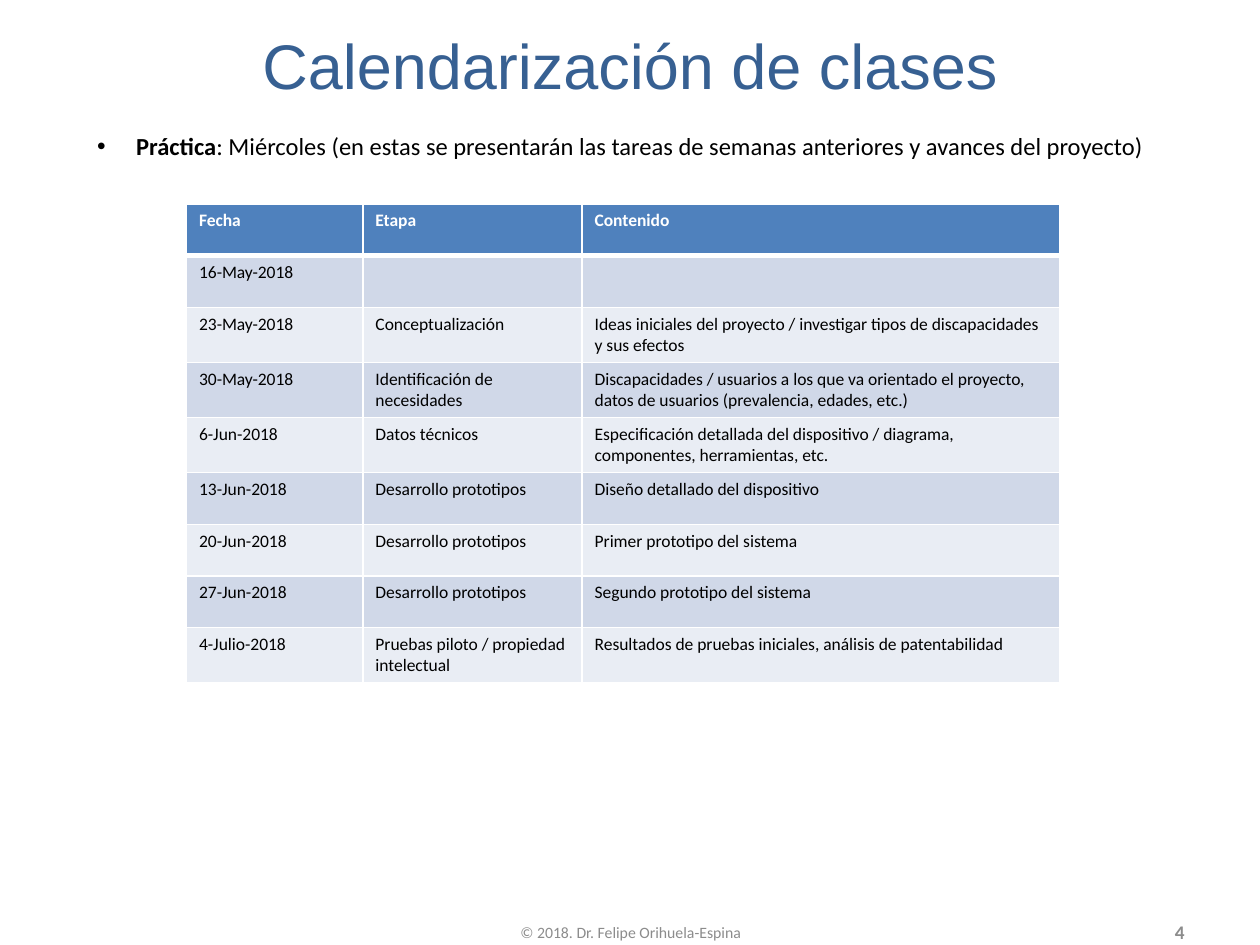
from lxml import etree
from pptx import Presentation
from pptx.dml.color import RGBColor
from pptx.enum.text import MSO_ANCHOR, MSO_AUTO_SIZE, PP_ALIGN
from pptx.oxml.ns import qn
from pptx.util import Inches, Pt

CENTER, RIGHT = PP_ALIGN.CENTER, PP_ALIGN.RIGHT
MIDDLE, TOP = MSO_ANCHOR.MIDDLE, MSO_ANCHOR.TOP
FIXED = MSO_AUTO_SIZE.NONE

COLORS = {
    "title": "376092",
    "head": "4F81BD",
    "odd": "D0D8E8",
    "even": "E9EDF4",
    "white": "FFFFFF",
    "black": "000000",
    "gray": "8C8C8C",
}
WIDTHS = [1.4, 1.74, 3.79]
ROW_H = 0.41
ROWS = [
    ("Fecha", "Etapa", "Contenido"),
    ("16-May-2018", "", ""),
    ("23-May-2018", "Conceptualización",
     "Ideas iniciales del proyecto / investigar tipos de discapacidades y sus efectos"),
    ("30-May-2018", "Identificación de necesidades",
     "Discapacidades / usuarios a los que va orientado el proyecto, "
     "datos de usuarios (prevalencia, edades, etc.)"),
    ("6-Jun-2018", "Datos técnicos",
     "Especificación detallada del dispositivo / diagrama, componentes, herramientas, etc."),
    ("13-Jun-2018", "Desarrollo prototipos", "Diseño detallado del dispositivo"),
    ("20-Jun-2018", "Desarrollo prototipos", "Primer prototipo del sistema"),
    ("27-Jun-2018", "Desarrollo prototipos", "Segundo prototipo del sistema"),
    ("4-Julio-2018", "Pruebas piloto / propiedad intelectual",
     "Resultados de pruebas iniciales, análisis de patentabilidad"),
]


def style(run, size, color, bold=False, face="Calibri"):
    font = run.font
    font.name, font.size, font.bold = face, Pt(size), bold
    font.color.rgb = RGBColor.from_string(COLORS[color])


def place(shape, left, top, width, height, anchor):
    shape.left, shape.top = Inches(left), Inches(top)
    shape.width, shape.height = Inches(width), Inches(height)
    frame = shape.text_frame
    frame.word_wrap = True
    frame.auto_size = FIXED
    frame.vertical_anchor = anchor
    return frame


def add_title(slide, text):
    frame = place(slide.shapes.title, 0.51, 0.05, 8.98, 0.92, MIDDLE)
    frame.text = text
    para = frame.paragraphs[0]
    para.alignment = CENTER
    style(para.runs[0], 36, "title", face="Arial")


def add_bullet(slide, lead, rest):
    frame = place(slide.placeholders[1], 0.67, 0.99, 8.98, 0.34, TOP)
    frame.text = lead
    para = frame.paragraphs[0]
    para.space_before = Pt(0)
    props = para._p.get_or_add_pPr()
    props.set("marL", str(Inches(0.31)))
    props.set("indent", str(Inches(-0.31)))
    etree.SubElement(props, qn("a:buFont"), typeface="Arial")
    etree.SubElement(props, qn("a:buChar"), char="•")
    para.add_run().text = rest
    for run, bold in zip(para.runs, (True, False)):
        style(run, 14, "black", bold)


def add_edge(cell, side, width):
    props = cell._tc.get_or_add_tcPr()
    line = etree.SubElement(props, qn("a:ln" + side), w=str(Pt(width)))
    fill = etree.SubElement(line, qn("a:solidFill"))
    etree.SubElement(fill, qn("a:srgbClr"), val=COLORS["white"])


def fill_cell(cell, text, row):
    head = row == 0
    for side in "LRTB":
        thick = (head and side == "B") or (row == 1 and side == "T")
        add_edge(cell, side, 3 if thick else 1)
    band = "head" if head else ("even", "odd")[row % 2]
    cell.fill.solid()
    cell.fill.fore_color.rgb = RGBColor.from_string(COLORS[band])
    cell.text = text
    for run in cell.text_frame.paragraphs[0].runs:
        style(run, 10, "white" if head else "black", head)


def add_grid(slide):
    frame = slide.shapes.add_table(
        len(ROWS), len(WIDTHS), Inches(1.48), Inches(1.62),
        Inches(sum(WIDTHS)), Inches(ROW_H * len(ROWS)))
    table = frame.table
    for col, width in zip(table.columns, WIDTHS):
        col.width = Inches(width)
    for row, texts in enumerate(ROWS):
        table.rows[row].height = Inches(ROW_H)
        for col, text in enumerate(texts):
            fill_cell(table.cell(row, col), text, row)


def add_foot(slide, text, left, width, align, size, bold=False):
    box = slide.shapes.add_textbox(0, 0, 0, 0)
    frame = place(box, left, 7.29, width, 0.21, MIDDLE)
    frame.text = text
    para = frame.paragraphs[0]
    para.alignment = align
    style(para.runs[0], size, "gray", bold)


def main():
    deck = Presentation()
    deck.slide_width, deck.slide_height = Inches(10), Inches(7.5)
    slide = deck.slides.add_slide(deck.slide_layouts[1])
    add_title(slide, "Calendarización de clases")
    add_bullet(slide, "Práctica",
               ": Miércoles (en estas se presentarán las tareas de semanas "
               "anteriores y avances del proyecto)")
    add_grid(slide)
    add_foot(slide, "© 2018. Dr. Felipe Orihuela-Espina", 3.42, 3.17, CENTER, 9)
    add_foot(slide, "4", 7.17, 2.33, RIGHT, 11, True)
    deck.save("out.pptx")


if __name__ == "__main__":
    main()
